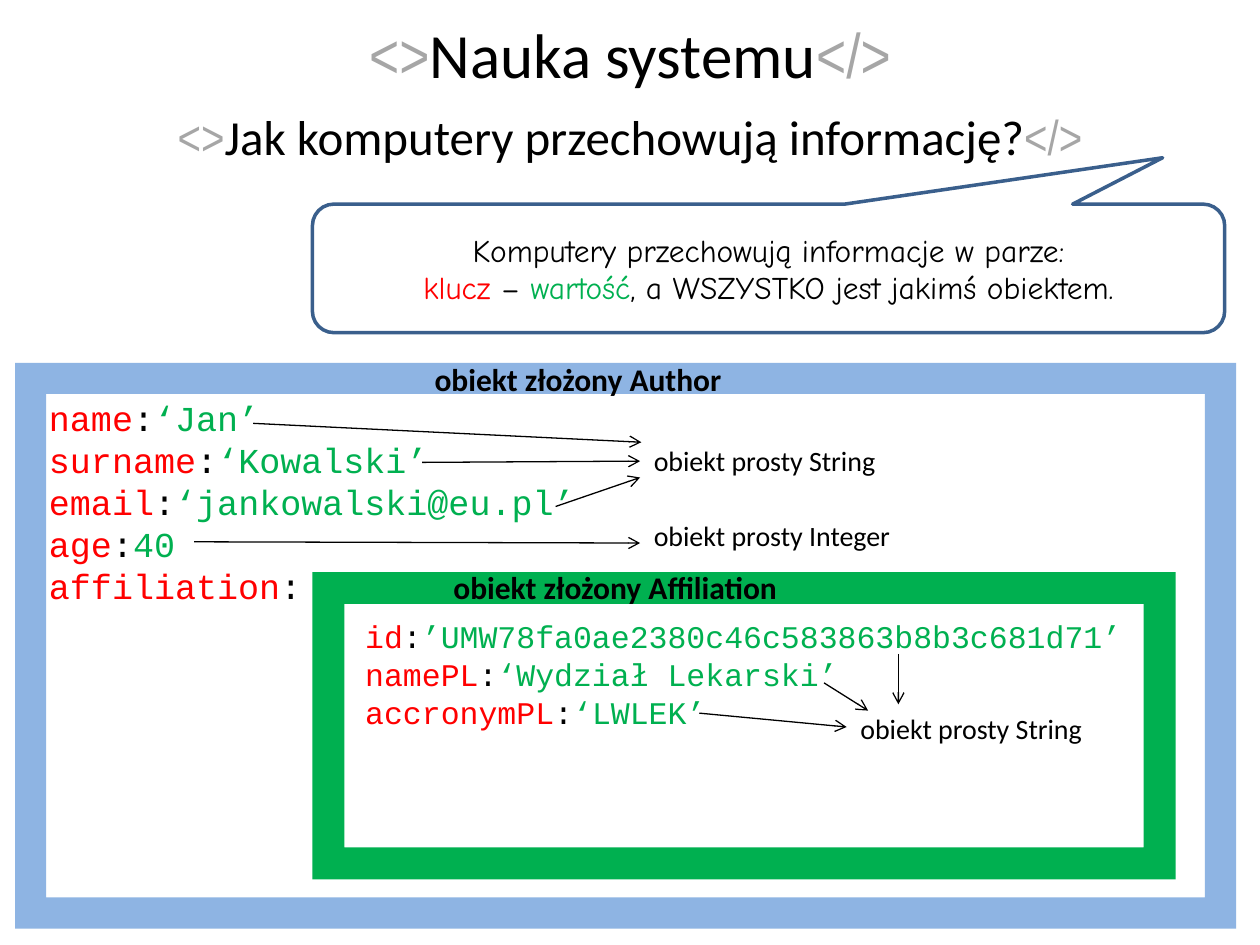
import pptx
import pptx.dml.color
import pptx.enum.shapes
import pptx.enum.text
import pptx.oxml
import pptx.util
from pptx.util import Inches

RGBColor = pptx.dml.color.RGBColor
BLACK = RGBColor(0x00, 0x00, 0x00)
WHITE = RGBColor(0xFF, 0xFF, 0xFF)
TAG_GREY = RGBColor(0xA6, 0xA6, 0xA6)
KEY_RED = RGBColor(0xFF, 0x00, 0x00)
VALUE_GREEN = RGBColor(0x00, 0xB0, 0x50)
AUTHOR_BLUE = RGBColor(0x8E, 0xB4, 0xE3)
CALLOUT_BLUE = RGBColor(0x3A, 0x5F, 0x8C)

SHAPES = pptx.enum.shapes.MSO_SHAPE
CENTER = pptx.enum.text.PP_ALIGN.CENTER
MIDDLE = pptx.enum.text.MSO_ANCHOR.MIDDLE

AUTHOR_FIELDS = [
    ("name", "‘Jan’"),
    ("surname", "‘Kowalski’"),
    ("email", "‘jankowalski@eu.pl’"),
    ("age", "40"),
    ("affiliation", ""),
]
AFFILIATION_FIELDS = [
    ("id", "’UMW78fa0ae2380c46c583863b8b3c681d71’"),
    ("namePL", "‘Wydział Lekarski’"),
    ("accronymPL", "‘LWLEK’"),
]
ARROWS = [
    ((2.01, 3.36), (5.09, 3.51)),
    ((4.41, 4.02), (5.08, 3.79)),
    ((3.35, 3.67), (5.08, 3.66)),
    ((1.54, 4.3), (5.08, 4.31)),
    ((5.55, 5.66), (6.72, 5.77)),
    ((6.54, 5.42), (6.89, 5.64)),
    ((7.13, 5.19), (7.13, 5.59)),
]


def add_runs(paragraph, parts, size, font="Calibri"):
    """Add (text, colour[, font]) parts, with font as the default."""
    for text, color, *own_font in parts:
        run = paragraph.add_run()
        run.text = text
        run.font.size = pptx.util.Pt(size)
        run.font.name = own_font[0] if own_font else font
        run.font.color.rgb = color


def write_heading(shape, text, size):
    """Write centred text between grey opening and closing tags."""
    frame = shape.text_frame
    frame.word_wrap = True
    frame.vertical_anchor = MIDDLE
    paragraph = frame.paragraphs[0]
    paragraph.alignment = CENTER
    add_runs(paragraph, [("<>", TAG_GREY, "Arial Narrow"), (text, BLACK),
                         ("</>", TAG_GREY, "Arial Narrow")], size)


def add_text_box(slide, left, top, width, height):
    box = slide.shapes.add_textbox(*map(Inches, (left, top, width, height)))
    box.text_frame.word_wrap = True
    return box


def add_label(slide, text, left, top, width=2.52, size=16, bold=False):
    box = add_text_box(slide, left, top, width, 0.37)
    box.text_frame.text = text
    font = box.text_frame.paragraphs[0].runs[0].font
    font.size, font.name, font.bold = pptx.util.Pt(size), "Calibri", bold
    font.color.rgb = BLACK


def add_fields(slide, fields, position, size):
    """List key:value pairs, one a line."""
    frame = add_text_box(slide, *position).text_frame
    for index, (key, value) in enumerate(fields):
        paragraph = frame.add_paragraph() if index else frame.paragraphs[0]
        parts = [(key, KEY_RED), (":", BLACK)]
        if value:
            parts.append((value, VALUE_GREEN))
        add_runs(paragraph, parts, size, "Courier New")


def add_filled_shape(slide, kind, position, adjustments, color):
    shape = slide.shapes.add_shape(kind, *map(Inches, position))
    for index, value in enumerate(adjustments):
        shape.adjustments[index] = value
    shape.shadow.inherit = False
    shape.fill.solid()
    shape.fill.fore_color.rgb = color
    shape.line.fill.background()
    return shape


def add_object_frame(slide, position, thickness, color):
    add_filled_shape(slide, SHAPES.FRAME, position, [thickness], color)


def add_callout(slide):
    callout = add_filled_shape(slide, SHAPES.ROUNDED_RECTANGULAR_CALLOUT,
                               (2.48, 1.62, 7.24, 1.02),
                               (0.432, -0.861, 0.167), WHITE)
    callout.line.color.rgb = CALLOUT_BLUE
    callout.line.width = pptx.util.Pt(2)
    frame = callout.text_frame
    frame.vertical_anchor = MIDDLE
    rule = frame.paragraphs[0]
    detail = frame.add_paragraph()
    rule.alignment = detail.alignment = CENTER
    add_runs(rule, [("Komputery przechowują informacje w parze:", BLACK)],
             18, "Comic Neue")
    add_runs(detail, [("klucz", KEY_RED), (" – ", BLACK),
                      ("wartość", VALUE_GREEN),
                      (", a WSZYSTKO jest jakimś obiektem.", BLACK)],
             18, "Comic Neue")


def add_arrow(slide, start, end):
    arrow = slide.shapes.add_connector(
        pptx.enum.shapes.MSO_CONNECTOR.STRAIGHT, *map(Inches, start + end))
    arrow.line.color.rgb = BLACK
    arrow.line.width = pptx.util.Pt(0.75)
    namespace = pptx.oxml.ns.nsdecls("a")
    arrow.line._get_or_add_ln().append(
        pptx.oxml.parse_xml(f'<a:tailEnd {namespace} type="arrow"/>'))
    arrow._element.spPr.append(
        pptx.oxml.parse_xml(f"<a:effectLst {namespace}/>"))


def main():
    presentation = pptx.Presentation()
    presentation.slide_width = Inches(10)
    presentation.slide_height = Inches(7.5)
    slide = presentation.slides.add_slide(presentation.slide_layouts[5])

    title = slide.shapes.title
    title.left, title.top = Inches(0), Inches(0)
    title.width, title.height = Inches(10), Inches(0.84)
    write_heading(title, "Nauka systemu", 36)
    add_callout(slide)
    write_heading(add_text_box(slide, 0, 0.68, 10, 0.79),
                  "Jak komputery przechowują informację?", 28)

    add_fields(slide, AUTHOR_FIELDS, (0.29, 3.1, 7.01, 2.42), 20)
    add_object_frame(slide, (0.12, 2.88, 9.69, 4.49), 0.055, AUTHOR_BLUE)
    add_label(slide, "obiekt złożony Author", 3.35, 2.81, size=18, bold=True)

    add_object_frame(slide, (2.48, 4.54, 6.85, 2.44), 0.104, VALUE_GREEN)
    add_label(slide, "obiekt złożony Affiliation", 3.5, 4.46, 3.78, 18, True)
    add_fields(slide, AFFILIATION_FIELDS, (2.8, 4.85, 6.46, 1.65), 18)

    add_label(slide, "obiekt prosty String", 5.09, 3.47)
    add_label(slide, "obiekt prosty Integer", 5.09, 4.07)
    add_label(slide, "obiekt prosty String", 6.73, 5.6)
    for start, end in ARROWS:
        add_arrow(slide, start, end)

    presentation.save("out.pptx")


if __name__ == "__main__":
    main()
